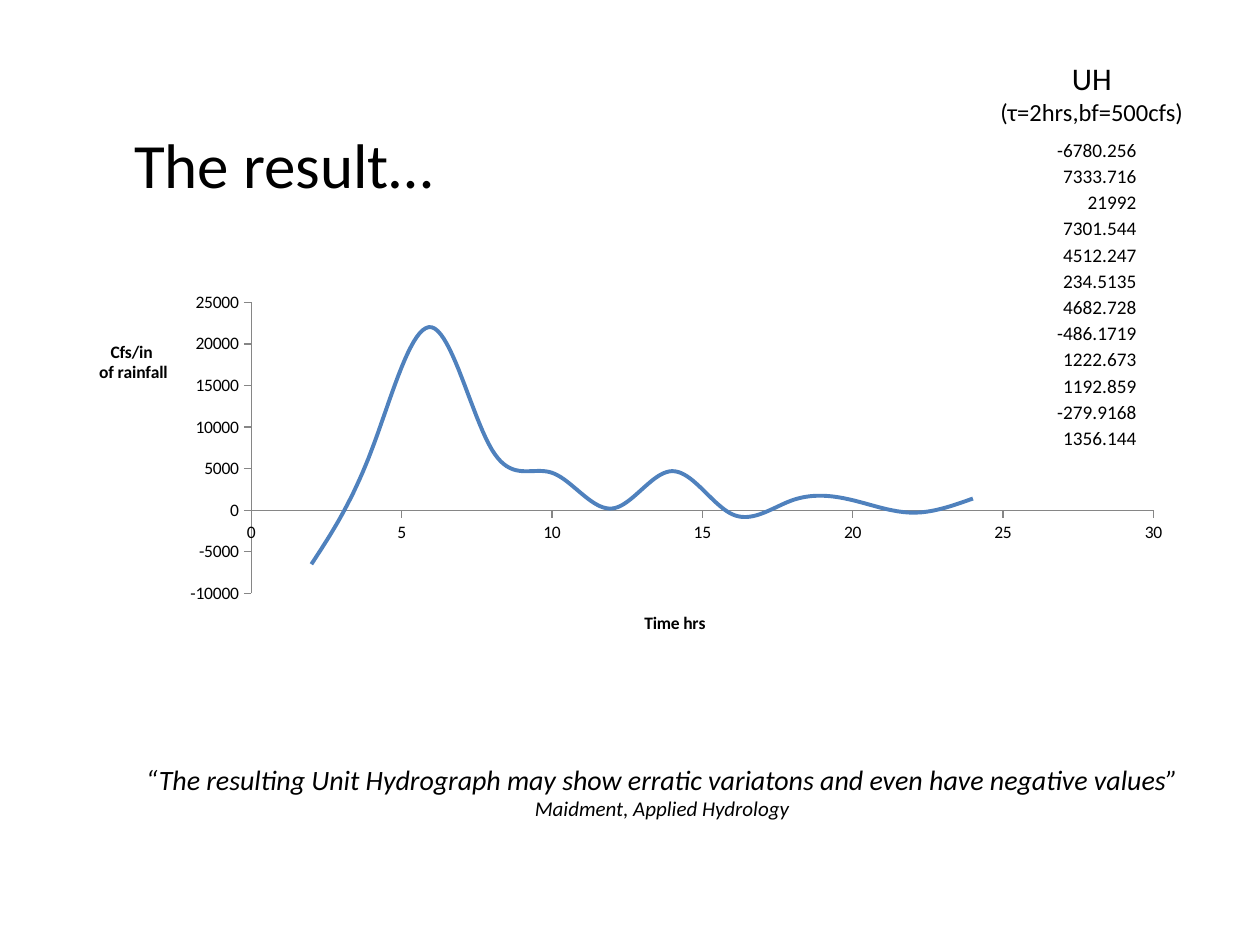
from dataclasses import dataclass

from lxml.etree import SubElement
from pptx import Presentation
from pptx.chart.data import XyChartData
from pptx.dml.color import RGBColor
from pptx.enum.chart import XL_CHART_TYPE as ChartType, XL_TICK_MARK as TickMark
from pptx.enum.text import MSO_ANCHOR as Anchor, MSO_AUTO_SIZE as AutoSize, PP_ALIGN as Align
from pptx.oxml.ns import qn
from pptx.util import Emu, Pt

FONT = "Calibri"
COLORS = {"text": "000000", "curve": "4F81BD", "axis": "868686"}
PX = 9144  # 100 px to the inch


@dataclass(frozen=True)
class Area:
    left: int
    top: int
    width: int
    height: int

    def emu(self) -> list[Emu]:
        return [Emu(n * PX) for n in (self.left, self.top, self.width, self.height)]


@dataclass(frozen=True)
class Span:
    text: str
    size: int
    italic: bool = False
    bold: bool = False


@dataclass(frozen=True)
class AxisSpec:
    low: int
    high: int
    step: int
    title: tuple[str, ...]
    title_x: float
    title_y: float


TITLE_AREA = Area(-225, 67, 900, 125)
CHART_AREA = Area(58, 225, 884, 300)
TABLE_AREA = Area(833, 108, 69, 250)
QUOTE_AREA = Area(92, 600, 867, 57)
HEADING_AREA = Area(775, 42, 183, 64)

TIME_AXIS = AxisSpec(0, 30, 5, ("Time hrs",), 0.51, 0.86)
FLOW_AXIS = AxisSpec(-10000, 25000, 5000, ("Cfs/in ", "of rainfall"), 0.02, 0.14)
FLOWS = (-6500, 7200, 22000, 7300, 4500, 200, 4700, -500, 1200, 1200, -300, 1400)
ORDINATES = ("-6780.256", "7333.716", "21992", "7301.544", "4512.247", "234.5135",
             "4682.728", "-486.1719", "1222.673", "1192.859", "-279.9168", "1356.144")


def color(name: str) -> RGBColor:
    return RGBColor.from_string(COLORS[name])


def write(frame, paragraphs: list[list[Span]], align: Align) -> None:
    for index, spans in enumerate(paragraphs):
        para = frame.paragraphs[0] if index == 0 else frame.add_paragraph()
        para.alignment = align
        for span in spans:
            run = para.add_run()
            run.text = span.text
            run.font.name, run.font.size = FONT, Pt(span.size)
            run.font.italic, run.font.bold = span.italic, span.bold
            run.font.color.rgb = color("text")


def add_text(page, area: Area, paragraphs: list[list[Span]]) -> None:
    frame = page.shapes.add_textbox(*area.emu()).text_frame
    frame.word_wrap = True
    frame.auto_size = AutoSize.SHAPE_TO_FIT_TEXT
    write(frame, paragraphs, Align.CENTER)


def set_layout(parent, position: int, **values) -> None:
    """Give a chart part a manual layout in fractions of the chart."""
    for old in parent.findall(qn("c:layout")):
        parent.remove(old)
    layout = SubElement(parent, qn("c:layout"))
    parent.insert(position, layout)
    manual = SubElement(layout, qn("c:manualLayout"))
    for tag, value in values.items():
        SubElement(manual, qn(f"c:{tag}")).set("val", str(value))


def format_axis(axis, spec: AxisSpec) -> None:
    axis.minimum_scale, axis.maximum_scale = spec.low, spec.high
    axis.major_unit = spec.step
    axis.has_major_gridlines = False
    axis.major_tick_mark, axis.minor_tick_mark = TickMark.OUTSIDE, TickMark.NONE
    axis.format.line.color.rgb = color("axis")
    axis.format.line.width = Pt(0.75)
    title = axis.axis_title
    write(title.text_frame, [[Span(line, 10, bold=True)] for line in spec.title], Align.CENTER)
    body = title._element.find(".//" + qn("a:bodyPr"))
    body.set("rot", "0")
    body.set("vert", "horz")
    set_layout(title._element, 1, xMode="edge", yMode="edge", x=spec.title_x, y=spec.title_y)


def add_hydrograph(page) -> None:
    data = XyChartData()
    series = data.add_series("Series 1")
    for index, flow in enumerate(FLOWS, start=1):
        series.add_data_point(2 * index, flow)
    chart = page.shapes.add_chart(
        ChartType.XY_SCATTER_SMOOTH_NO_MARKERS, *CHART_AREA.emu(), data).chart
    chart.has_legend = chart.has_title = False
    chart.font.name, chart.font.size = FONT, Pt(10)
    chart.font.color.rgb = color("text")
    plot = chart.plots[0]
    plot.vary_by_categories = False
    curve = plot.series[0]
    curve.format.line.color.rgb = color("curve")
    curve.format.line.width = Pt(2.25)
    # An XY series has no public smooth property
    curve._element.get_or_add_smooth().set("val", "1")
    format_axis(chart.category_axis, TIME_AXIS)
    format_axis(chart.value_axis, FLOW_AXIS)
    plot_area = chart._chartSpace.find(".//" + qn("c:plotArea"))
    set_layout(plot_area, 0, layoutTarget="inner", xMode="edge", yMode="edge",
               x=0.16, y=0.05, w=0.81, h=0.77)


def add_ordinates(page) -> None:
    table = page.shapes.add_table(len(ORDINATES), 1, *TABLE_AREA.emu()).table
    table.first_row = table.horz_banding = False
    for row, value in zip(table.rows, ORDINATES):
        row.height = Emu(TABLE_AREA.height * PX // len(ORDINATES))
        cell = row.cells[0]
        cell.fill.background()
        cell.margin_left = cell.margin_right = cell.margin_top = cell.margin_bottom = 0
        cell.vertical_anchor = Anchor.BOTTOM
        write(cell.text_frame, [[Span(value, 11)]], Align.RIGHT)
        # No cell borders
        for side in ("a:lnB", "a:lnT", "a:lnR", "a:lnL"):
            border = SubElement(cell._tc.tcPr, qn(side))
            SubElement(border, qn("a:noFill"))
            cell._tc.tcPr.insert(0, border)


def main() -> None:
    deck = Presentation()
    deck.slide_width, deck.slide_height = Emu(1000 * PX), Emu(750 * PX)
    page = deck.slides.add_slide(deck.slide_layouts[5])

    # Title
    title = page.shapes.title
    title.left, title.top, title.width, title.height = TITLE_AREA.emu()
    title.text_frame.vertical_anchor = Anchor.MIDDLE
    write(title.text_frame, [[Span("The result…", 36)]], Align.CENTER)

    # Unit hydrograph: ordinates, quotation, curve and column heading
    add_ordinates(page)
    add_text(page, QUOTE_AREA, [
        [Span("“The resulting Unit Hydrograph may show erratic variatons "
              "and even have negative values”", 16, italic=True)],
        [Span("Maidment, Applied Hydrology", 12, italic=True)],
    ])
    add_hydrograph(page)
    add_text(page, HEADING_AREA, [[Span("UH ", 18), Span("(τ=2hrs,bf=500cfs)", 14)]])

    deck.save("out.pptx")


if __name__ == "__main__":
    main()
